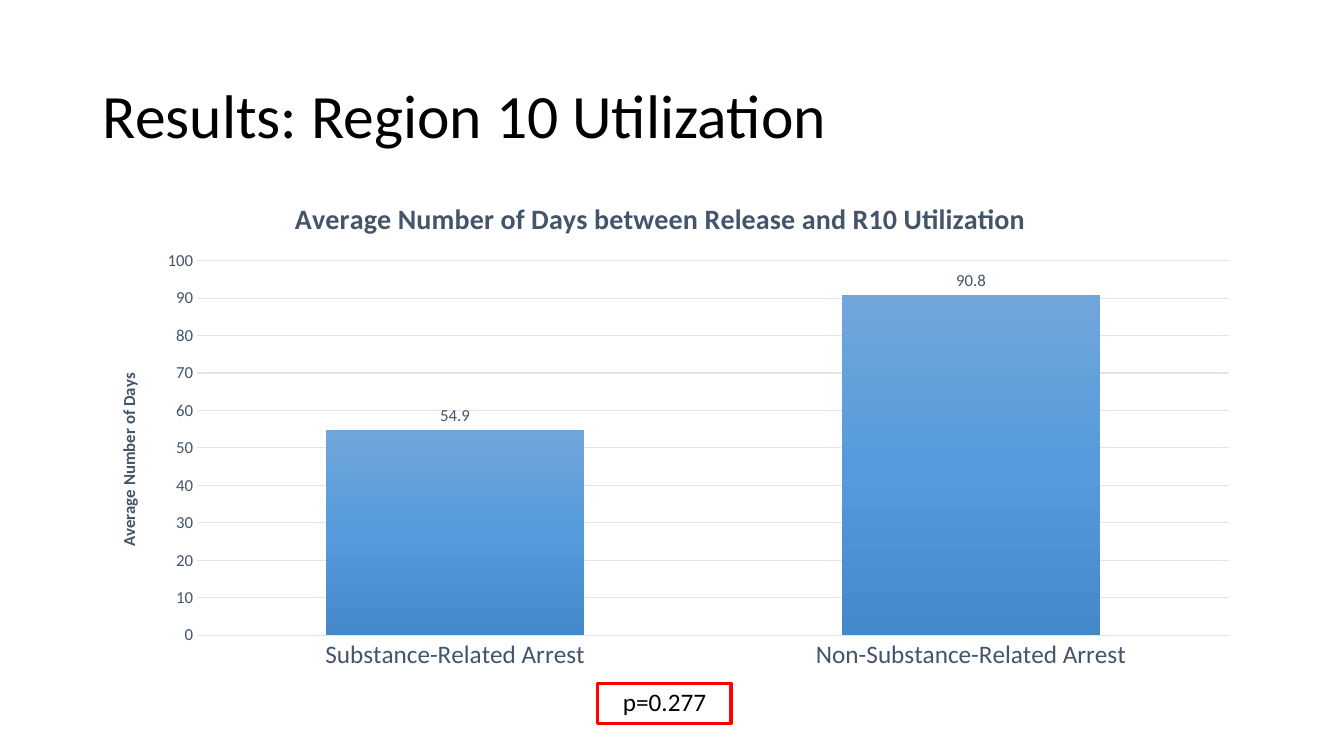
from lxml import etree
from pptx import Presentation
from pptx.chart.data import CategoryChartData
from pptx.dml.color import RGBColor
from pptx.enum.chart import XL_CHART_TYPE, XL_LABEL_POSITION, XL_TICK_MARK
from pptx.enum.shapes import MSO_SHAPE
from pptx.enum.text import MSO_ANCHOR
from pptx.oxml import parse_xml
from pptx.oxml.ns import nsdecls, qn
from pptx.util import Inches, Pt

COLUMNS = XL_CHART_TYPE.COLUMN_CLUSTERED
OUTSIDE_END = XL_LABEL_POSITION.OUTSIDE_END
NO_TICKS = XL_TICK_MARK.NONE
RECTANGLE = MSO_SHAPE.RECTANGLE
MIDDLE = MSO_ANCHOR.MIDDLE

FONT = "Calibri"
COLORS = {"text": "000000", "chart": "44546A", "grid": "E0E5EB", "frame": "FF0000",
          "bar_top": "71A6DB", "bar_middle": "559BDB", "bar_bottom": "448ACA"}


def style_font(font, size, color, bold=False):
    font.name = FONT
    font.size = Pt(size)
    font.bold = bold
    font.color.rgb = RGBColor.from_string(COLORS[color])


def place_manually(parent, **shares):
    """Give a chart part a fixed place, in shares of the chart's size."""
    for old_layout in parent.findall(qn("c:layout")):
        parent.remove(old_layout)
    layout = etree.Element(qn("c:layout"))
    manual = etree.SubElement(layout, qn("c:manualLayout"))
    if "w" in shares:
        etree.SubElement(manual, qn("c:layoutTarget")).set("val", "inner")
    for mode in ("xMode", "yMode"):
        etree.SubElement(manual, qn(f"c:{mode}")).set("val", "edge")
    for name, share in shares.items():
        etree.SubElement(manual, qn(f"c:{name}")).set("val", str(share))
    text = parent.find(qn("c:tx"))
    parent.insert(0 if text is None else 1, layout)


presentation = Presentation()
presentation.slide_width = Inches(13.33)
presentation.slide_height = Inches(7.5)
slide = presentation.slides.add_slide(presentation.slide_layouts[6])
left, content_width = Inches(0.92), Inches(11.5)

# Heading and p-value
texts = [
    ("Results: Region 10 Utilization", (left, Inches(0.4), content_width, Inches(1.45)), 44),
    ("p=0.277", (Inches(6.08), Inches(6.76), Inches(1.18), Inches(0.4)), 18),
]
for wording, place, size in texts:
    text_frame = slide.shapes.add_textbox(*place).text_frame
    text_frame.word_wrap = True
    text_frame.vertical_anchor = MIDDLE
    text_frame.text = wording
    style_font(text_frame.paragraphs[0].runs[0].font, size, "text")

# Column chart
chart_data = CategoryChartData()
chart_data.categories = ["Substance-Related Arrest", "Non-Substance-Related Arrest"]
chart_data.add_series("Series 1", [54.9, 90.8])
chart = slide.shapes.add_chart(
    COLUMNS, left, Inches(1.67), content_width, Inches(5.09), chart_data).chart
style_font(chart.font, 10, "text")
chart.has_legend = False
chart.has_title = True
value_axis, category_axis = chart.value_axis, chart.category_axis
value_axis.has_title = True

titles = [
    (chart.chart_title, "Average Number of Days between Release and R10 Utilization", 20),
    (value_axis.axis_title, "Average Number of Days", 12),
]
for title, wording, size in titles:
    title.text_frame.text = wording
    style_font(title.text_frame.paragraphs[0].runs[0].font, size, "chart", bold=True)

# Axes
for axis, size in ((category_axis, 18), (value_axis, 12)):
    axis.major_tick_mark = axis.minor_tick_mark = NO_TICKS
    style_font(axis.tick_labels.font, size, "chart")
value_axis.minimum_scale, value_axis.maximum_scale, value_axis.major_unit = 0, 100, 10
value_axis.format.line.fill.background()
for line in (category_axis.format.line, value_axis.major_gridlines.format.line):
    line.color.rgb = RGBColor.from_string(COLORS["grid"])
    line.width = Pt(0.75)

# Bars with a gradient from top to bottom
plot = chart.plots[0]
plot.vary_by_categories = False
plot.gap_width, plot.overlap = 100, -24
stops = "".join(
    f'<a:gs pos="{position}"><a:srgbClr val="{COLORS[name]}"/></a:gs>'
    for position, name in ((0, "bar_top"), (50000, "bar_middle"), (100000, "bar_bottom")))
bar_properties = plot.series[0].format.fill._xPr
bar_properties.insert(0, parse_xml(
    f'<a:gradFill {nsdecls("a")} rotWithShape="1"><a:gsLst>{stops}</a:gsLst>'
    '<a:lin ang="5400000" scaled="0"/></a:gradFill>'))

# Value labels
plot.has_data_labels = True
labels = plot.data_labels
labels.show_value = True
labels.position = OUTSIDE_END
style_font(labels.font, 12, "chart")

# Places inside the chart
place_manually(chart._chartSpace.chart.plotArea, x=0.09, y=0.18, w=0.89, h=0.73)
place_manually(chart.chart_title._element, x=0.17, y=0.05)

# Frame around the p-value
frame = slide.shapes.add_shape(
    RECTANGLE, Inches(5.93), Inches(6.78), Inches(1.32), Inches(0.4))
frame.shadow.inherit = False
frame.fill.background()
frame.line.color.rgb = RGBColor.from_string(COLORS["frame"])
frame.line.width = Pt(2.25)

presentation.save("out.pptx")
